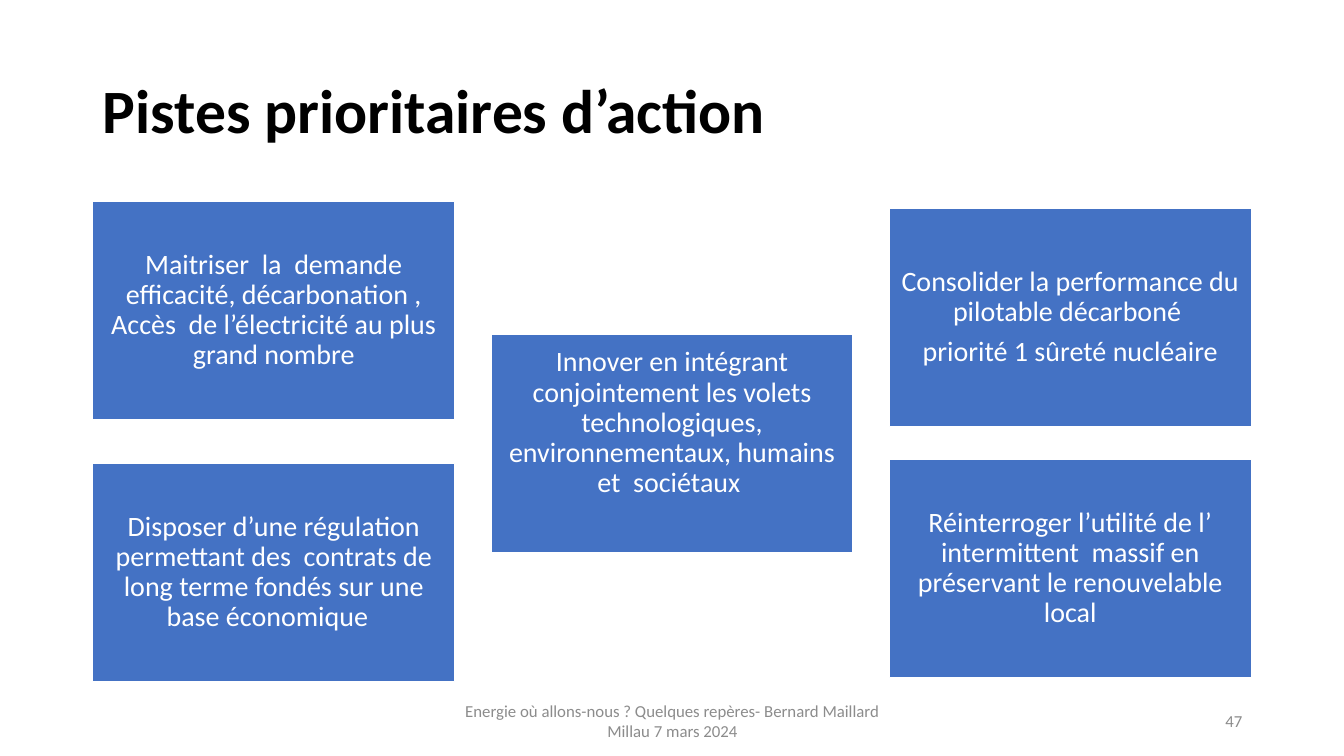
from pptx import Presentation
from pptx.dml.color import RGBColor
from pptx.enum.shapes import MSO_SHAPE as Shape
from pptx.enum.text import MSO_ANCHOR as Anchor, PP_ALIGN as Align
from pptx.util import Inches, Pt

LEFT, COL, ROW = 0.92, 0.5, 0.1  # grid origin and steps, inches
BOX_COLS, BOX_ROWS = 7.18, 21.6
STEP = 7.9  # columns from one box to the next


def paint(code):
    return RGBColor.from_string(code)


class Board:
    font, black, white, blue, gray = "Calibri", "000000", "FFFFFF", "4472C4", "8C8C8C"

    def __init__(self, slide):
        self.slide = slide

    def place(self, col, row, cols, rows):
        """Turn grid units into left, top, width and height."""
        return (Inches(LEFT + col * COL), Inches(row * ROW),
                Inches(cols * COL), Inches(rows * ROW))

    def add_text(self, frame, lines, size, color, align, bold=False, lead=1.0, after=0):
        frame.word_wrap = True
        frame.vertical_anchor = Anchor.MIDDLE
        for i, line in enumerate(lines):
            para = frame.add_paragraph() if i else frame.paragraphs[0]
            para.alignment = align
            para.line_spacing = lead
            para.space_after = Pt(after)
            run = para.add_run()
            run.text = line
            run.font.name = self.font
            run.font.size = Pt(size)
            run.font.bold = bold
            run.font.color.rgb = paint(color)

    def label(self, spot, text, size, color, align, **style):
        box = self.slide.shapes.add_textbox(*self.place(*spot))
        self.add_text(box.text_frame, [text], size, color, align, **style)

    def card(self, col, row, lines, lift=0):
        """Draw a box; lift raises its text by widening the bottom inset."""
        spot = self.place(col * STEP, row, BOX_COLS, BOX_ROWS)
        box = self.slide.shapes.add_shape(Shape.RECTANGLE, *spot)
        box.shadow.inherit = False
        box.fill.solid()
        box.fill.fore_color.rgb = paint(self.blue)
        box.line.color.rgb = paint(self.white)
        box.line.width = Pt(1)
        frame = box.text_frame
        frame.margin_left = frame.margin_right = frame.margin_top = Inches(0.08)
        frame.margin_bottom = Inches(0.08 + lift)
        self.add_text(frame, lines, 20, self.white, Align.CENTER, lead=0.9, after=7)


def main():
    deck = Presentation()
    deck.slide_width, deck.slide_height = Inches(13.33), Inches(7.5)
    board = Board(deck.slides.add_slide(deck.slide_layouts[6]))

    board.label((0, 4, 23, 14.5), "Pistes prioritaires d’action", 44,
                board.black, Align.LEFT, bold=True, lead=0.9)

    board.card(0, 46, ["Disposer d’une régulation permettant des  contrats de "
                       "long terme fondés sur une base économique  "])
    board.card(0, 20, ["Maitriser  la  demande efficacité, décarbonation , "
                       "Accès  de l’électricité au plus grand nombre"])
    board.card(2, 45.6, ["Réinterroger l’utilité de l’ intermittent  massif en "
                         "préservant le renouvelable local"])
    board.card(1, 33.2, ["Innover en intégrant conjointement les volets technologiques, "
                         "environnementaux, humains et  sociétaux "], lift=0.4)
    board.card(2, 20.7, ["Consolider la performance du pilotable décarboné ",
                         "priorité 1 sûreté nucléaire"])

    board.label((7, 69.5, 9, 4), "Energie où allons-nous ? Quelques repères- "
                "Bernard Maillard Millau 7 mars 2024", 12, board.gray, Align.CENTER)
    board.label((17, 69.5, 6, 4), "47", 12, board.gray, Align.RIGHT)
    deck.save("out.pptx")


if __name__ == "__main__":
    main()
